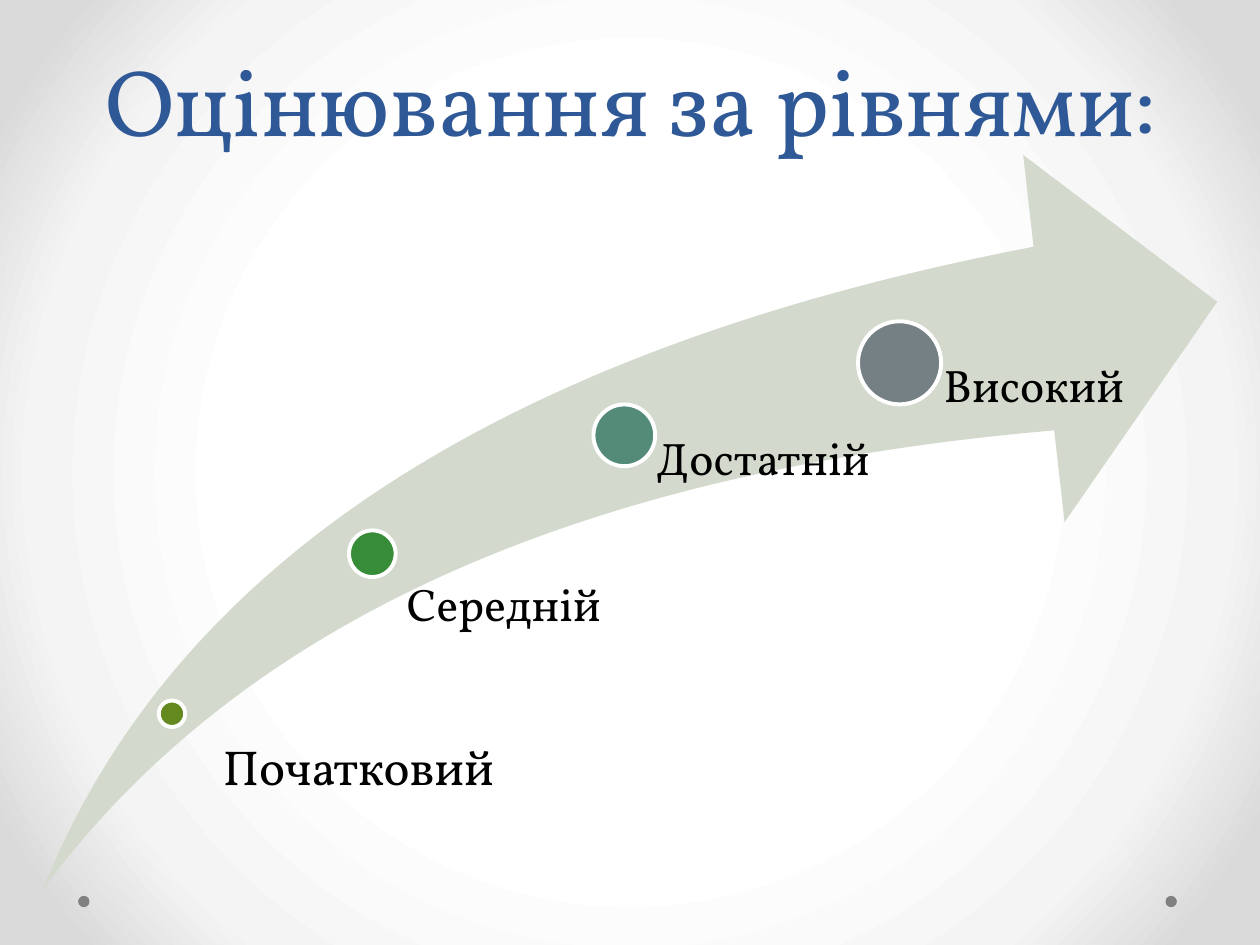
"""Build a slide of four assessment levels rising along a swoosh arrow."""
from dataclasses import dataclass

from pptx import Presentation, oxml
from pptx.dml.color import RGBColor
from pptx.enum import shapes, text
from pptx.oxml import ns
from pptx.util import Inches, Pt

FONT = "Vollkorn"
COLORS = {
    "title": "2F5897", "label": "000000", "arrow": "D3DACD",
    "outline": "FFFFFF", "dot": "808080",
    "initial": "63891F", "middle": "378D37",
    "sufficient": "538B78", "high": "758085",
}
BACKGROUND_STOPS = [(50, "FFFFFF"), (76, "F4F4F4"), (92, "DADADA")]


@dataclass
class Level:
    name: str
    color: str
    marker: tuple[float, float, float]
    label: tuple[float, float, float, float]
    inset: float
    size: int = 26


LEVELS = [
    Level("Початковий", "initial", (1.26, 5.56, 0.21), (1.66, 5.9, 2.71, 0.65), 0.11, 28),
    Level("Середній", "middle", (2.77, 4.21, 0.37), (3.03, 4.62, 2.61, 0.77), 0.2),
    Level("Достатній", "sufficient", (4.71, 3.21, 0.49), (4.95, 3.46, 1.96, 3.6), 0.26),
    Level("Високий", "high", (6.81, 2.55, 0.66), (7.14, 2.88, 1.96, 4.18), 0.35),
]


def rgb(name: str) -> RGBColor:
    return RGBColor.from_string(COLORS[name])


def set_background(s) -> None:
    stops = "".join(
        f'<a:gs pos="{pos * 1000}"><a:srgbClr val="{color}"/></a:gs>'
        for pos, color in BACKGROUND_STOPS
    )
    bg = oxml.parse_xml(
        f'<p:bg {ns.nsdecls("p", "a")}><p:bgPr><a:gradFill rotWithShape="1">'
        f'<a:gsLst>{stops}</a:gsLst><a:path path="circle">'
        '<a:fillToRect l="50000" t="50000" r="50000" b="50000"/></a:path>'
        '</a:gradFill><a:effectLst/></p:bgPr></p:bg>'
    )
    s.element.cSld.insert(0, bg)


def add_filled(s, kind, box: tuple, color: str, outlined: bool = False):
    sp = s.shapes.add_shape(kind, *map(Inches, box))
    sp.shadow.inherit = False
    sp.fill.solid()
    sp.fill.fore_color.rgb = rgb(color)
    if outlined:
        sp.line.color.rgb = rgb("outline")
        sp.line.width = Pt(2.25)
    else:
        sp.line.fill.background()
    return sp


def add_circle(s, left: float, top: float, size: float, color: str, outlined: bool = False) -> None:
    add_filled(s, shapes.MSO_SHAPE.OVAL, (left, top, size, size), color, outlined)


def add_run(p, wording: str, size: int, color: str) -> None:
    r = p.add_run()
    r.text = wording
    r.font.name = FONT
    r.font.size = Pt(size)
    r.font.color.rgb = rgb(color)


def add_title(s, wording: str) -> None:
    sp = s.shapes.title
    sp.left, sp.top, sp.width, sp.height = map(Inches, (0.51, 0.13, 9, 1.15))
    tf = sp.text_frame
    tf.auto_size = text.MSO_AUTO_SIZE.NONE
    tf.vertical_anchor = text.MSO_ANCHOR.BOTTOM
    p = tf.paragraphs[0]
    p.alignment = text.PP_ALIGN.CENTER
    p.line_spacing = Pt(58)
    add_run(p, wording, 54, "title")


def add_level(s, level: Level) -> None:
    add_circle(s, *level.marker, level.color, outlined=True)
    tf = s.shapes.add_textbox(*map(Inches, level.label)).text_frame
    tf.word_wrap = True
    tf.margin_left = Inches(level.inset)
    tf.margin_top = tf.margin_right = tf.margin_bottom = 0
    p = tf.paragraphs[0]
    p.line_spacing = 0.9
    add_run(p, level.name, level.size, "label")


def main() -> None:
    prs = Presentation()
    prs.slide_width, prs.slide_height = Inches(10), Inches(7.5)
    s = prs.slides.add_slide(prs.slide_layouts[5])
    set_background(s)
    for left in (9.25, 0.62):
        add_circle(s, left, 7.11, 0.09, "dot")
    add_title(s, "Оцінювання за рівнями:")
    arrow = add_filled(s, shapes.MSO_SHAPE.SWOOSH_ARROW, (0.34, 1.23, 9.32, 5.83), "arrow")
    arrow.adjustments[0] = arrow.adjustments[1] = 0.25
    for level in LEVELS:
        add_level(s, level)
    prs.save("out.pptx")


if __name__ == "__main__":
    main()
